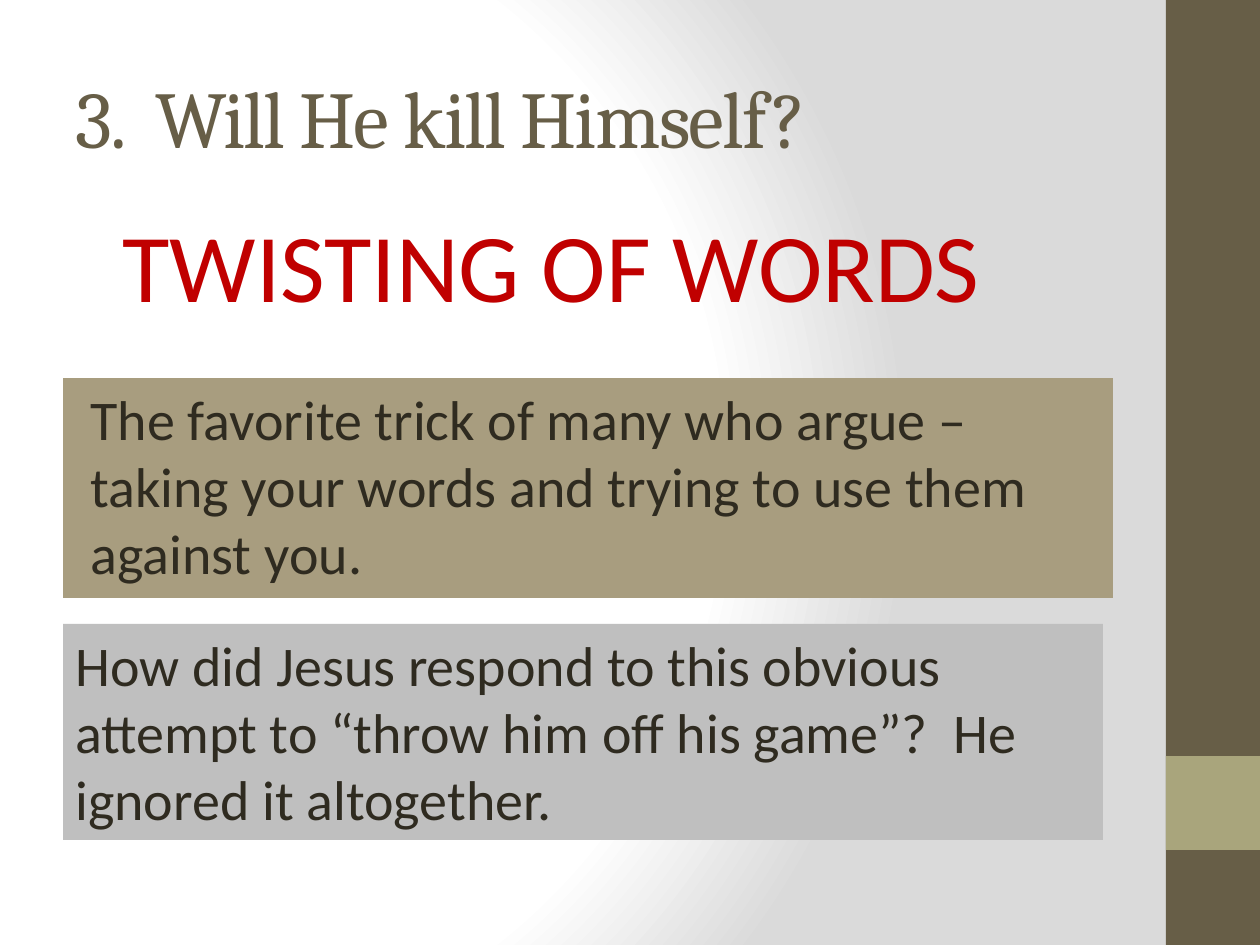
from dataclasses import dataclass

from pptx import Presentation
from pptx.dml.color import RGBColor as RGB
from pptx.enum.shapes import MSO_SHAPE as SHAPE
from pptx.enum.text import MSO_ANCHOR as ANCHOR, PP_ALIGN as ALIGN
from pptx.oxml import parse_xml
from pptx.oxml.ns import qn
from pptx.util import Pt

PX = 914400 / 126
W, H = 1260, 945
BAR_X, BAR_W = 1166, 94
LEFT = 63
INDENT = 15


@dataclass(frozen=True)
class Theme:
    heading_font: str = "Cambria"
    body_font: str = "Calibri"
    brown: str = "675E47"
    olive: str = "A9A57C"
    tan: str = "A89D7F"
    grey: str = "BFBFBF"
    ink: str = "2F2B20"
    red: str = "C00000"
    glow: tuple = ((0, "FFFFFF"), (75, "FFFFFF"), (100, "DADADA"))
    title_size: float = 46
    banner_size: float = 55.5
    body_size: float = 32


def emu(*lengths):
    return [round(n * PX) for n in lengths]


class Deck:
    def __init__(self, theme):
        self.theme = theme
        self.prs = Presentation()
        self.prs.slide_width, self.prs.slide_height = emu(W, H)
        self.s = self.prs.slides.add_slide(self.prs.slide_layouts[5])

    def background(self):
        self.s.background.fill.gradient()
        old = next(self.s.element.iter(qn("a:gradFill")))
        stops = "".join(
            f'<a:gs pos="{pos * 1000}"><a:srgbClr val="{color}"/></a:gs>'
            for pos, color in self.theme.glow
        )
        new = parse_xml(
            '<a:gradFill xmlns:a="http://schemas.openxmlformats.org/drawingml/2006/main" rotWithShape="1">'
            f'<a:gsLst>{stops}</a:gsLst><a:path path="circle">'
            '<a:fillToRect l="20000" t="50000" r="100000" b="50000"/></a:path></a:gradFill>'
        )
        old.getparent().replace(old, new)

    def rect(self, x, y, w, h, color):
        sp = self.s.shapes.add_shape(SHAPE.RECTANGLE, *emu(x, y, w, h))
        sp.shadow.inherit = False
        sp.fill.solid()
        sp.fill.fore_color.rgb = RGB.from_string(color)
        sp.line.fill.background()

    def set_text(self, sp, text, font, size, color, anchor=ANCHOR.TOP):
        tf = sp.text_frame
        tf.word_wrap = True
        tf.vertical_anchor = anchor
        p = tf.paragraphs[0]
        p.text = text
        p.alignment = ALIGN.LEFT
        p.font.name = font
        p.font.size = Pt(size)
        p.font.color.rgb = RGB.from_string(color)
        return p

    def title(self, x, y, w, h, text):
        t = self.theme
        sp = self.s.shapes.title
        sp.left, sp.top, sp.width, sp.height = emu(x, y, w, h)
        p = self.set_text(sp, text, t.heading_font, t.title_size, t.brown, ANCHOR.MIDDLE)
        p.runs[0].font._element.set("spc", "-100")

    def text(self, x, y, w, h, text, size, color, fill=None, indent=0):
        sp = self.s.shapes.add_textbox(*emu(x, y, w, h))
        if fill:
            sp.fill.solid()
            sp.fill.fore_color.rgb = RGB.from_string(fill)
        p = self.set_text(sp, text, self.theme.body_font, size, color)
        if indent:
            pPr = p._p.get_or_add_pPr()
            pPr.set("marL", str(emu(indent)[0]))
            pPr.set("indent", "0")


def main():
    t = Theme()
    d = Deck(t)
    d.background()
    d.rect(BAR_X, 0, BAR_W, H, t.brown)
    d.rect(BAR_X, 756, BAR_W, BAR_W, t.olive)
    d.title(LEFT, 38, 1050, 157, "3.  Will He kill Himself?")
    d.text(LEFT, 378, 1050, 220,
           "The favorite trick of many who argue – taking your words and trying to use them against you.",
           t.body_size, t.ink, t.tan, INDENT)
    d.text(95, 199, 966, 136, "TWISTING OF WORDS", t.banner_size, t.red, indent=INDENT)
    d.text(LEFT, 624, 1040, 216,
           "How did Jesus respond to this obvious attempt to “throw him off his game”?  He ignored it altogether.",
           t.body_size, t.ink, t.grey)
    d.prs.save("out.pptx")


if __name__ == "__main__":
    main()
